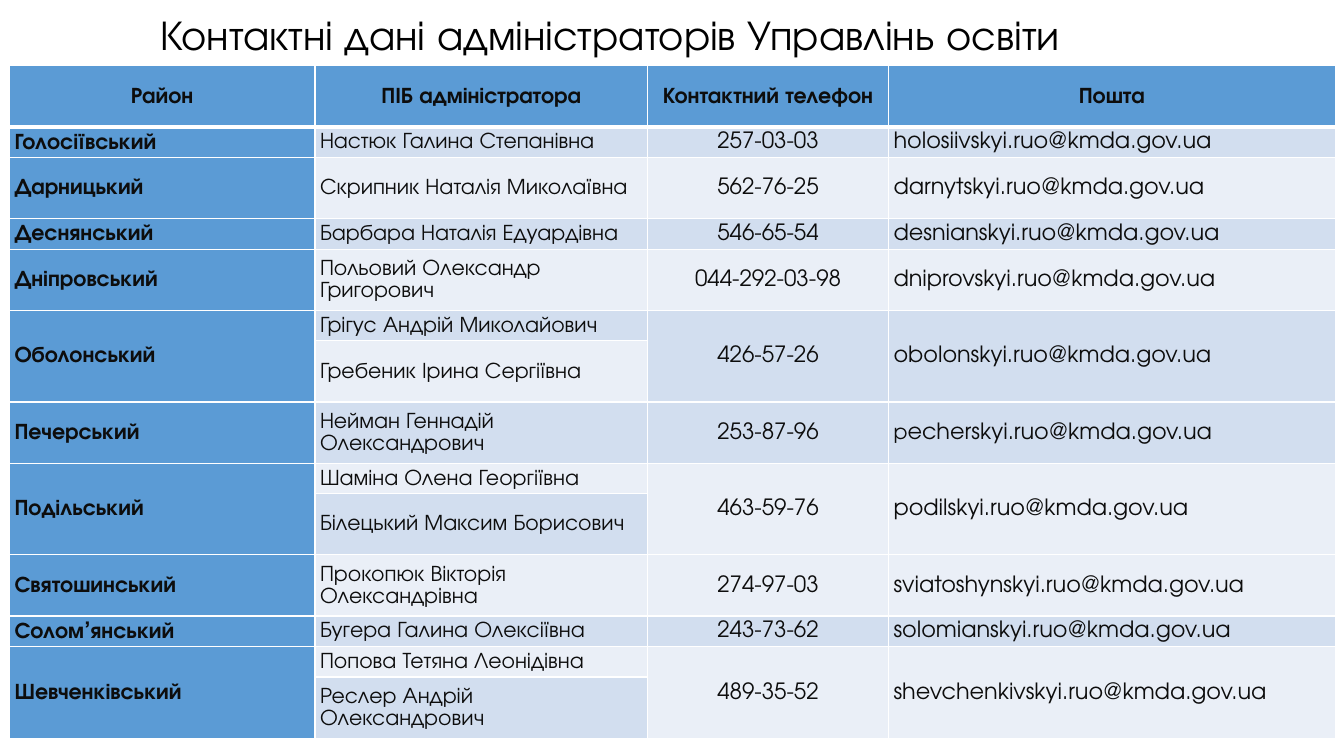
from dataclasses import dataclass

from lxml import etree
from pptx import Presentation
from pptx import util as u
from pptx.dml.color import RGBColor
from pptx.enum import text
from pptx.oxml import ns

FONT = "TeX Gyre Adventor"
BLUE, WHITE, INK = "5B9BD5", "FFFFFF", "0D0D0D"
BANDS = ("EAEFF7", "D2DEEF")
LOW, TALL = 21.8, 43.7
COLUMN_WIDTHS = (218.2, 237.6, 172.1, 319)
HEADINGS = ("Район", "ПІБ адміністратора", "Контактний телефон", "Пошта")


@dataclass(frozen=True)
class Administrator:
    name: str
    height: float = TALL


@dataclass(frozen=True)
class District:
    name: str
    phone: str
    mail: str
    administrators: tuple[Administrator, ...]


DISTRICTS = (
    District("Голосіївський", "257-03-03", "holosiivskyi",
             (Administrator("Настюк Галина Степанівна", LOW),)),
    District("Дарницький", "562-76-25", "darnytskyi",
             (Administrator("Скрипник Наталія Миколаївна"),)),
    District("Деснянський", "546-65-54", "desnianskyi",
             (Administrator("Барбара Наталія Едуардівна", LOW),)),
    District("Дніпровський", "044-292-03-98", "dniprovskyi",
             (Administrator("Польовий Олександр Григорович"),)),
    District("Оболонський", "426-57-26", "obolonskyi",
             (Administrator("Грігус Андрій Миколайович", LOW),
              Administrator("Гребеник Ірина Сергіївна"))),
    District("Печерський", "253-87-96", "рecherskyi",
             (Administrator("Нейман Геннадій Олександрович"),)),
    District("Подільський", "463-59-76", "podilskyi",
             (Administrator("Шаміна Олена Георгіївна", LOW),
              Administrator("Білецький Максим Борисович"))),
    District("Святошинський", "274-97-03", "sviatoshynskyi",
             (Administrator("Прокопюк Вікторія Олександрівна"),)),
    District("Солом’янський", "243-73-62", "solomianskyi",
             (Administrator("Бугера Галина Олексіївна", LOW),)),
    District("Шевченківський", "489-35-52", "shevchenkivskyi",
             (Administrator("Попова Тетяна Леонідівна", LOW),
              Administrator("Реслер Андрій Олександрович"))),
)


def color(value: str) -> RGBColor:
    return RGBColor.from_string(value)


def apply(target, formats: dict) -> None:
    for attribute, value in formats.items():
        setattr(target, attribute, value)


def write(frame, content: str, size: float, ink: str, bold: bool,
          alignment, spacing: float) -> None:
    frame.text = content
    paragraph = frame.paragraphs[0]
    apply(paragraph, {"alignment": alignment, "line_spacing": spacing,
                      "space_before": u.Pt(0), "space_after": u.Pt(0)})
    font = paragraph.runs[0].font
    apply(font, {"name": FONT, "size": u.Pt(size), "bold": bold})
    font.color.rgb = color(ink)


def draw_borders(cell, top: float, bottom: float) -> None:
    properties = cell._tc.get_or_add_tcPr()
    widths = {"lnL": 1, "lnR": 1, "lnT": top, "lnB": bottom}
    for position, (tag, width) in enumerate(widths.items()):
        line = etree.Element(ns.qn(f"a:{tag}"), w=str(u.Pt(width)))
        fill = etree.SubElement(line, ns.qn("a:solidFill"))
        etree.SubElement(fill, ns.qn("a:srgbClr"), val=WHITE)
        properties.insert(position, line)


def style_cell(cell, row: int, column: int) -> None:
    apply(cell, {"vertical_anchor": text.MSO_ANCHOR.MIDDLE,
                 "margin_left": u.Pt(3.6), "margin_right": u.Pt(3.6),
                 "margin_top": u.Pt(0), "margin_bottom": u.Pt(0)})
    cell.fill.solid()
    cell.fill.fore_color.rgb = color(BLUE if row == 0 or column == 0 else BANDS[row % 2])
    draw_borders(cell, top=3 if row == 1 else 1, bottom=3 if row == 0 else 1)


def fill_cell(table, row: int, column: int, content: str) -> None:
    centred = row == 0 or column == 2
    alignment = text.PP_ALIGN.CENTER if centred else text.PP_ALIGN.LEFT
    write(table.cell(row, column).text_frame, content, 16, INK,
          row == 0 or column == 0, alignment, 1.07)


def add_title(slide) -> None:
    title = slide.shapes.title
    apply(title, {"left": u.Pt(107.3), "top": u.Pt(12.2),
                  "width": u.Pt(828), "height": u.Pt(28.1)})
    apply(title.text_frame, {"vertical_anchor": text.MSO_ANCHOR.MIDDLE,
                             "word_wrap": True, "auto_size": text.MSO_AUTO_SIZE.NONE})
    write(title.text_frame, "Контактні дані адміністраторів Управлінь освіти",
          30, "000000", False, text.PP_ALIGN.LEFT, 0.9)


def add_contacts(slide) -> None:
    heights = [TALL] + [person.height for district in DISTRICTS
                        for person in district.administrators]
    table = slide.shapes.add_table(
        len(heights), len(COLUMN_WIDTHS), u.Pt(6.8), u.Pt(47),
        u.Pt(sum(COLUMN_WIDTHS)), u.Pt(sum(heights))).table
    for column, width in zip(table.columns, COLUMN_WIDTHS):
        column.width = u.Pt(width)
    for row, height in enumerate(heights):
        table.rows[row].height = u.Pt(height)
        for column in range(len(COLUMN_WIDTHS)):
            style_cell(table.cell(row, column), row, column)

    # Header row
    for column, heading in enumerate(HEADINGS):
        fill_cell(table, 0, column, heading)

    # One block of rows per district
    row = 1
    for district in DISTRICTS:
        last = row + len(district.administrators) - 1
        shared = {0: district.name, 2: district.phone,
                  3: f"{district.mail}.ruo@kmda.gov.ua"}
        for column, content in shared.items():
            fill_cell(table, row, column, content)
            if last > row:
                table.cell(row, column).merge(table.cell(last, column))
        for offset, person in enumerate(district.administrators):
            fill_cell(table, row + offset, 1, person.name)
        row = last + 1


def main() -> None:
    presentation = Presentation()
    apply(presentation, {"slide_width": u.Pt(960), "slide_height": u.Pt(540)})
    slide = presentation.slides.add_slide(presentation.slide_layouts[5])
    add_title(slide)
    add_contacts(slide)
    presentation.save("out.pptx")


if __name__ == "__main__":
    main()
